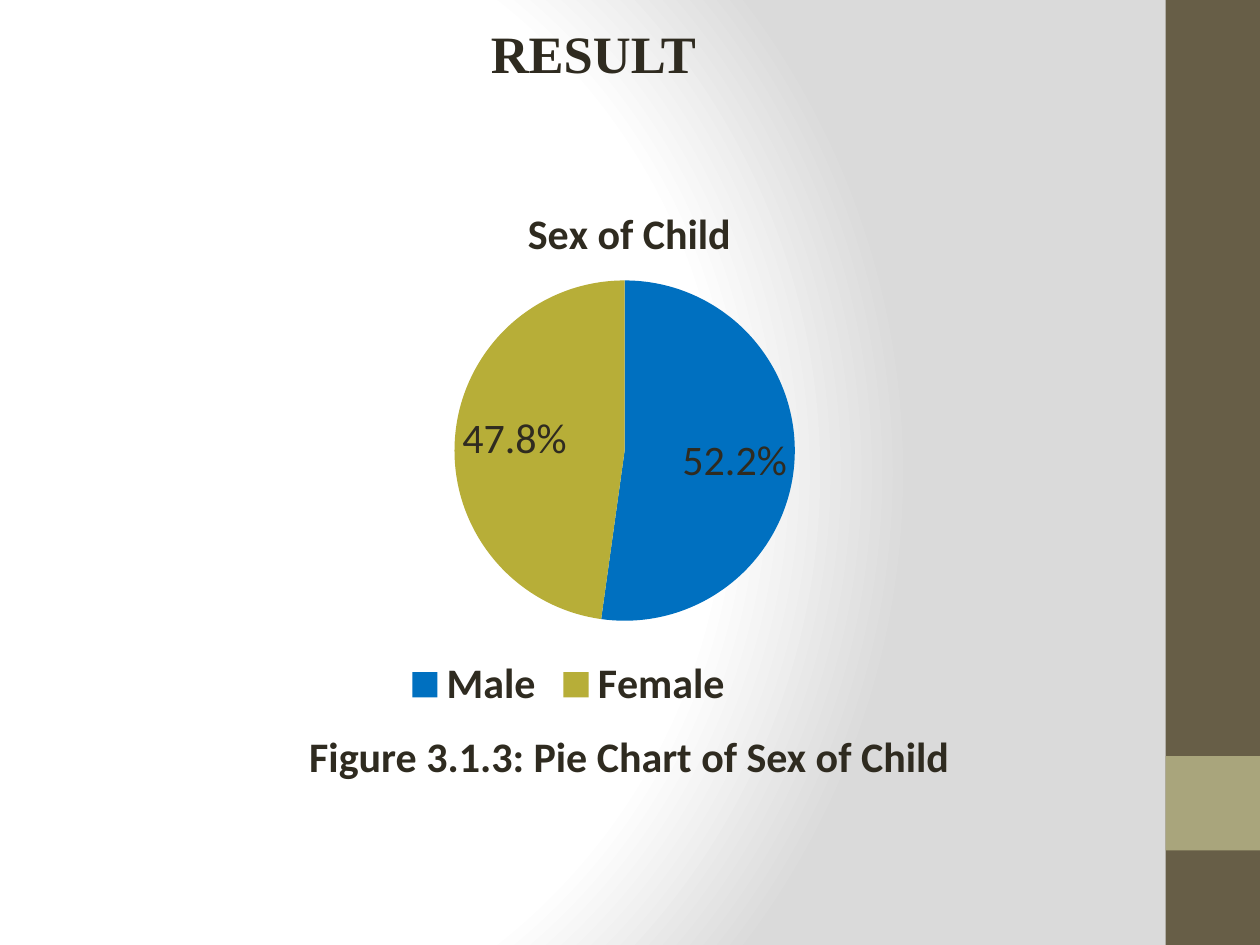
from lxml import etree
from pptx import Presentation
from pptx.chart.data import CategoryChartData
from pptx.dml.color import RGBColor
from pptx.enum.chart import XL_CHART_TYPE, XL_LABEL_POSITION, XL_LEGEND_POSITION
from pptx.enum.shapes import MSO_SHAPE
from pptx.enum.text import MSO_ANCHOR, MSO_AUTO_SIZE, PP_ALIGN
from pptx.oxml import parse_xml
from pptx.oxml.ns import nsdecls, qn
from pptx.util import Inches, Pt

COLORS = {
    "text": "2F2B20", "band": "675E47", "accent": "A9A57C",
    "white": "FFFFFF", "grey": "DADADA", "male": "0070C0", "female": "B7AE38",
}


def style_font(font, size, bold, name="Calibri"):
    font.name, font.size, font.bold = name, Pt(size), bold
    font.color.rgb = RGBColor.from_string(COLORS["text"])


def set_layout(parent, before, **values):
    """Give a chart part a manual layout, placed ahead of its `before` child."""
    for old in parent.findall(qn("c:layout")):
        parent.remove(old)
    layout = etree.Element(qn("c:layout"))
    manual = etree.SubElement(layout, qn("c:manualLayout"))
    for tag, val in values.items():
        etree.SubElement(manual, qn(f"c:{tag}")).set("val", str(val))
    parent.find(qn(before)).addprevious(layout)


prs = Presentation()
prs.slide_width, prs.slide_height = Inches(10), Inches(7.5)
s = prs.slides.add_slide(prs.slide_layouts[6])

# Background: white circle fading to grey on the right
fill = s.background.fill
fill.solid()
fill.fore_color.rgb = RGBColor.from_string(COLORS["white"])
stops = "".join(
    f'<a:gs pos="{pos * 1000}"><a:srgbClr val="{COLORS[name]}"/></a:gs>'
    for pos, name in ((0, "white"), (75, "white"), (100, "grey")))
gradient = parse_xml(
    f'<a:gradFill {nsdecls("a")} rotWithShape="1"><a:gsLst>{stops}</a:gsLst>'
    '<a:path path="circle"><a:fillToRect l="20000" t="50000" r="100000" b="50000"/>'
    '</a:path></a:gradFill>')
solid = next(s.background._cSld.iter(qn("a:solidFill")))
solid.getparent().replace(solid, gradient)

# Side band and its accent square
for top, height, color in ((0, 7.5, "band"), (6, 0.75, "accent")):
    sp = s.shapes.add_shape(MSO_SHAPE.RECTANGLE, Inches(9.25), Inches(top),
                            Inches(0.75), Inches(height))
    sp.shadow.inherit = False
    sp.fill.solid()
    sp.fill.fore_color.rgb = RGBColor.from_string(COLORS[color])
    sp.line.fill.background()

# Pie chart
data = CategoryChartData(number_format="0.0%")
data.categories = ["Male", "Female"]
data.add_series("Sex of Child", (0.522, 0.478))
chart = s.shapes.add_chart(XL_CHART_TYPE.PIE, Inches(1.33), Inches(1.42),
                           Inches(7.33), Inches(4.74), data).chart
style_font(chart.font, 10, False)

chart.has_title = True
p = chart.chart_title.text_frame.paragraphs[0]
p.text = "Sex of Child"
style_font(p.font, 24, True)

chart.has_legend = True
legend = chart.legend
legend.position = XL_LEGEND_POSITION.BOTTOM
legend.include_in_layout = False
style_font(legend.font, 24, True)
set_layout(legend._element, "c:overlay", xMode="edge", yMode="edge", x=0.25, y=0.79)

plot = chart.plots[0]
plot.vary_by_categories = True
set_layout(chart._chartSpace.chart.plotArea, "c:pieChart", layoutTarget="inner",
           xMode="edge", yMode="edge", x=0.2, y=0.17, w=0.59, h=0.57)
for i, color in enumerate(("male", "female")):
    point_fill = plot.series[0].points[i].format.fill
    point_fill.solid()
    point_fill.fore_color.rgb = RGBColor.from_string(COLORS[color])

plot.has_data_labels = True
labels = plot.data_labels
labels.show_value, labels.show_percentage = True, False
labels.number_format, labels.number_format_is_linked = "0.0%", False
labels.position = XL_LABEL_POSITION.INSIDE_END
style_font(labels.font, 24, False)

# Heading and caption
texts = (
    ("RESULT", (2.92, 0.08, 3.58, 0.67), 30, "Times New Roman", True),
    ("Figure 3.1.3: Pie Chart of Sex of Child", (2.33, 5.75, 5.33, 0.5), 24, "Calibri", False),
)
for text, box, size, face, wrap in texts:
    tf = s.shapes.add_textbox(*map(Inches, box)).text_frame
    tf.word_wrap = wrap
    tf.auto_size = MSO_AUTO_SIZE.NONE if wrap else MSO_AUTO_SIZE.SHAPE_TO_FIT_TEXT
    tf.vertical_anchor = MSO_ANCHOR.MIDDLE
    p = tf.paragraphs[0]
    p.text = text
    p.alignment = PP_ALIGN.CENTER
    style_font(p.font, size, True, face)

prs.save("out.pptx")
